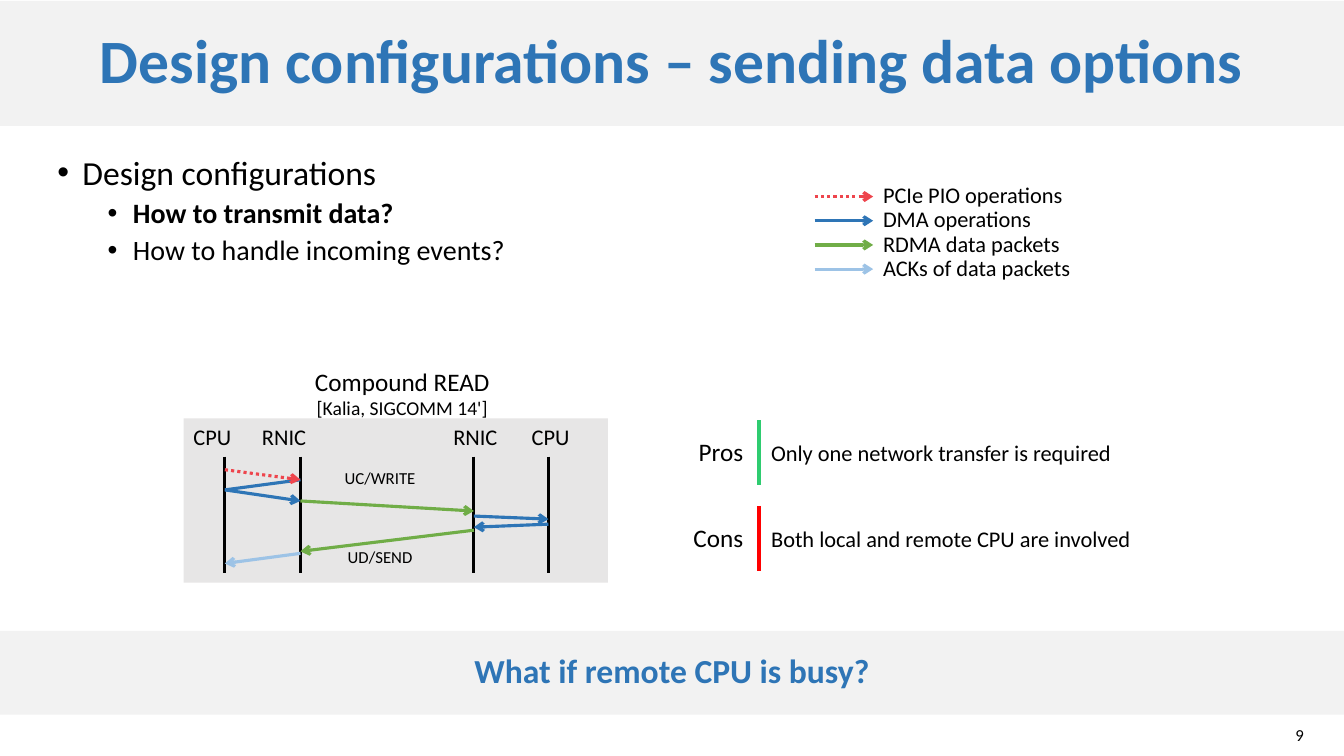
import pptx
import pptx.dml.color
import pptx.enum.dml
import pptx.enum.shapes
import pptx.enum.text
import pptx.oxml.ns
import pptx.util
from dataclasses import dataclass
from lxml import etree

Inches, Pt = pptx.util.Inches, pptx.util.Pt
PP_ALIGN = pptx.enum.text.PP_ALIGN
ANCHOR = pptx.enum.text.MSO_ANCHOR
qn = pptx.oxml.ns.qn


@dataclass(frozen=True)
class Theme:
    font: str = "Calibri"
    text: str = "000000"
    accent: str = "2E75B6"
    band: str = "F2F2F2"
    panel: str = "E7E6E6"
    pio: str = "EE454D"
    dma: str = "2E75B6"
    rdma: str = "70AD47"
    ack: str = "9DC3E6"
    pro: str = "2ECC70"
    con: str = "FF0000"
    title: int = 44
    heading: int = 24
    subheading: int = 20
    label: int = 18
    body: int = 16
    cite: int = 14
    small: int = 12
    line: float = 2.25
    bar: float = 3


T = Theme()


def rgb(color):
    return pptx.dml.color.RGBColor.from_string(color)


def style(p, size, color=T.text, bold=False, align=PP_ALIGN.LEFT):
    p.alignment = align
    for r in p.runs:
        r.font.name, r.font.size, r.font.bold = T.font, Pt(size), bold
        r.font.color.rgb = rgb(color)


def add_text(slide, box, text, size, align=PP_ALIGN.LEFT, anchor=ANCHOR.TOP, wrap=True):
    tf = slide.shapes.add_textbox(*map(Inches, box)).text_frame
    tf.word_wrap, tf.vertical_anchor = wrap, anchor
    tf.text = text
    for p in tf.paragraphs:
        style(p, size, align=align)
    return tf


def add_rect(slide, box, fill):
    kind = pptx.enum.shapes.MSO_SHAPE.RECTANGLE
    sp = slide.shapes.add_shape(kind, *map(Inches, box))
    sp.shadow.inherit = False
    sp.fill.solid()
    sp.fill.fore_color.rgb = rgb(fill)
    sp.line.fill.background()
    return sp


def add_line(slide, start, end, color, width=T.line, arrow=False):
    kind = pptx.enum.shapes.MSO_CONNECTOR.STRAIGHT
    cn = slide.shapes.add_connector(kind, *map(Inches, (*start, *end)))
    cn.line.color.rgb, cn.line.width = rgb(color), Pt(width)
    if color == T.pio:
        cn.line.dash_style = pptx.enum.dml.MSO_LINE.ROUND_DOT
    if arrow:
        etree.SubElement(cn.line._get_or_add_ln(), qn("a:tailEnd"), type="arrow")
    etree.SubElement(cn._element.spPr, qn("a:effectLst"))


def add_band(slide, box, text, size):
    """Full-width grey band with a bold centred statement."""
    tf = add_rect(slide, box, T.band).text_frame
    tf.word_wrap, tf.vertical_anchor = True, ANCHOR.MIDDLE
    tf.text = text
    tf.paragraphs[0].line_spacing = 0.9
    style(tf.paragraphs[0], size, T.accent, True, PP_ALIGN.CENTER)


def add_bullets(slide, box, items):
    """Bulleted outline; items are (level, text, bold)."""
    tf = add_text(slide, box, "\n".join(text for _, text, _ in items), T.heading)
    for p, (level, _, bold) in zip(tf.paragraphs, items):
        style(p, T.subheading if level else T.heading, bold=bold)
        p.level, p.line_spacing = level, 0.9
        p.space_before = Pt(5 if level else 12)
        pPr = p._p.get_or_add_pPr()
        pPr.set("marL", str(Inches(0.25 + 0.5 * level)))
        pPr.set("indent", str(Inches(-0.25)))
        etree.SubElement(pPr, qn("a:buFont"), typeface="Arial")
        etree.SubElement(pPr, qn("a:buChar"), char="•")


def add_legend(slide, box, entries):
    """Arrow key, one row per operation."""
    x, y, w, h = box
    pitch, arrow_w = h / len(entries), 0.58
    for i, (text, color) in enumerate(entries):
        top = y + i * pitch
        add_line(slide, (x, top + 0.2), (x + arrow_w, top + 0.2), color, arrow=True)
        add_text(slide, (x + arrow_w, top, w - arrow_w, 0.37), text, T.body)


def add_sequence(slide, box):
    """Sequence diagram of a compound READ on a grey panel."""
    x, y, w, h = box
    add_rect(slide, box, T.panel)

    # Lifelines
    lanes = [x + dx for dx in (0.41, 1.16, 2.88, 3.62)]
    for lane in lanes:
        add_line(slide, (lane, y + 0.38), (lane, y + 1.53), T.text)

    # Lifeline names, by left edge, width and alignment
    names = [("CPU", 0, 0.93, PP_ALIGN.LEFT), ("RNIC", 0.68, 1.08, PP_ALIGN.LEFT),
             ("RNIC", 2.43, 0.93, PP_ALIGN.CENTER), ("CPU", 3.1, 1.08, PP_ALIGN.CENTER)]
    for name, dx, width, align in names:
        add_text(slide, (x + dx, y, width, 0.45), name, T.body, align)

    # Messages: from lane, to lane, start and end height, colour, arrowhead
    messages = [(1, 0, 0.61, 0.71, T.dma, False), (0, 1, 0.71, 0.82, T.dma, True),
                (1, 2, 0.82, 0.92, T.rdma, True), (2, 3, 0.97, 1.0, T.dma, True),
                (2, 1, 1.11, 1.32, T.rdma, True), (1, 0, 1.34, 1.44, T.ack, True),
                (0, 1, 0.51, 0.61, T.pio, True), (3, 2, 1.05, 1.08, T.dma, True)]
    for a, b, y0, y1, color, arrow in messages:
        add_line(slide, (lanes[a], y + y0), (lanes[b], y + y1), color, arrow=arrow)
    for verb, dy in (("UC/WRITE", 0.44), ("UD/SEND", 1.22)):
        add_text(slide, (x + 1.28, y + dy, 1.34, 0.37), verb, T.small, PP_ALIGN.CENTER)

    # Caption above the panel
    tf = add_text(slide, (x + 0.83, y - 0.57, 2.68, 0.78),
                  "Compound READ\n[Kalia, SIGCOMM 14']", T.label, PP_ALIGN.CENTER, wrap=False)
    style(tf.paragraphs[1], T.cite, align=PP_ALIGN.CENTER)


def add_verdict(slide, box, label, text, color):
    """Label, coloured bar and statement."""
    x, y, w, h = box
    bar = x + 0.83
    add_text(slide, (x, y + 0.11, 0.77, 0.4), label, T.label, PP_ALIGN.RIGHT, wrap=False)
    add_line(slide, (bar, y), (bar, y + h), color, T.bar)
    add_text(slide, (bar + 0.02, y + 0.14, w - 0.85, 0.37), text, T.body)


def build_slide(prs):
    slide = prs.slides.add_slide(prs.slide_layouts[6])
    add_band(slide, (0, 0.01, 13.33, 1.24),
             "Design configurations – sending data options", T.title)
    add_bullets(slide, (0.47, 1.5, 12.36, 1.3), [
        (0, "Design configurations", False),
        (1, "How to transmit data?", True),
        (1, "How to handle incoming events?", False)])
    add_legend(slide, (8.08, 1.75, 3.08, 0.96), [
        ("PCIe PIO operations", T.pio), ("DMA operations", T.dma),
        ("RDMA data packets", T.rdma), ("ACKs of data packets", T.ack)])
    add_sequence(slide, (1.82, 4.15, 4.21, 1.63))
    add_verdict(slide, (6.7, 4.17, 5.85, 0.64), "Pros",
                "Only one network transfer is required", T.pro)
    add_verdict(slide, (6.7, 5.02, 5.85, 0.64), "Cons",
                "Both local and remote CPU are involved", T.con)
    add_band(slide, (0, 6.26, 13.33, 0.83), "What if remote CPU is busy?", T.heading)
    # Slide number
    add_text(slide, (11.96, 7.14, 1.07, 0.3), "9", T.small, PP_ALIGN.RIGHT, ANCHOR.MIDDLE)


def main():
    prs = pptx.Presentation()
    prs.slide_width, prs.slide_height = Inches(13.33), Inches(7.5)
    build_slide(prs)
    prs.save("out.pptx")


if __name__ == "__main__":
    main()
